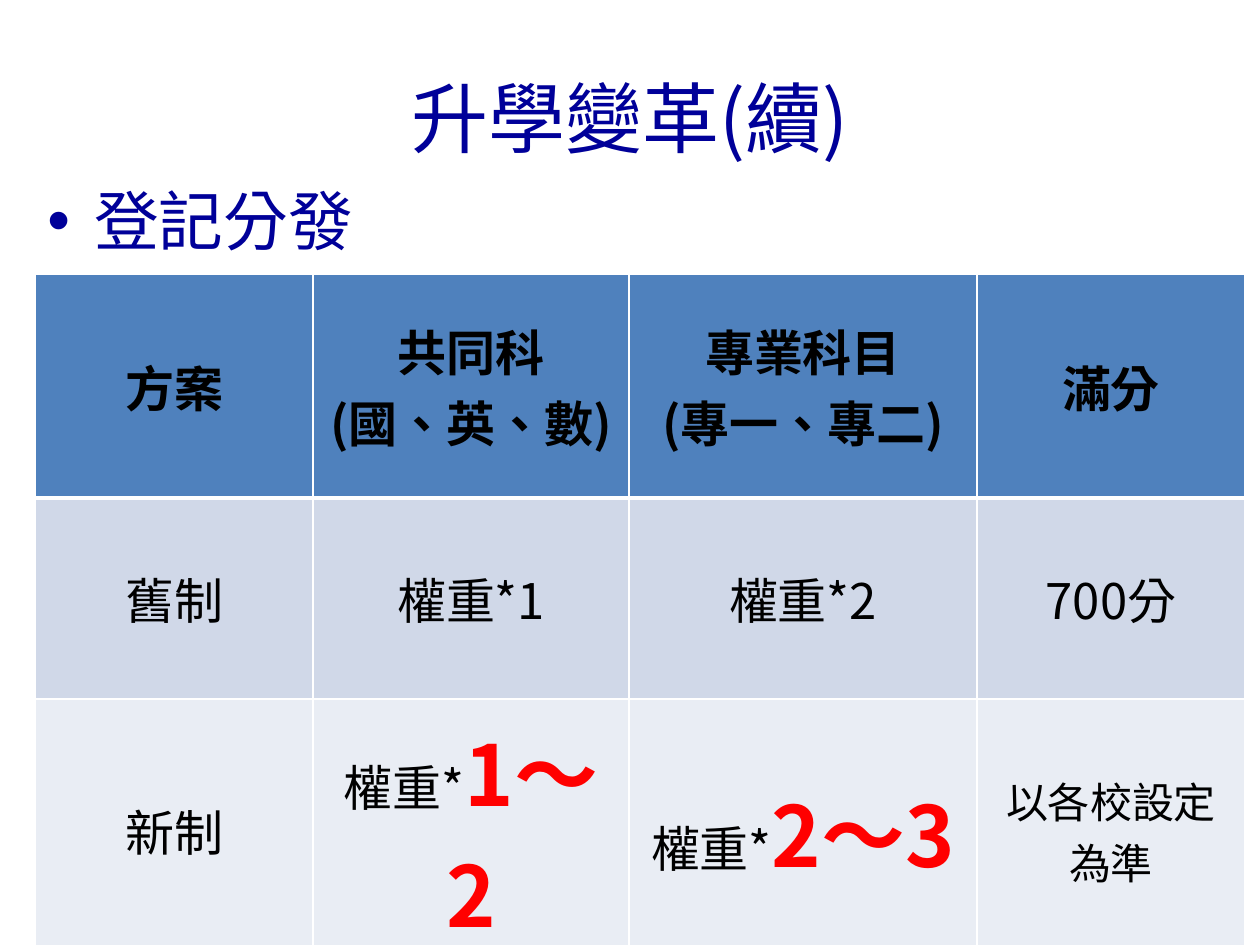
import dataclasses

import pptx
import pptx.dml.color
import pptx.enum.lang
import pptx.enum.text
import pptx.oxml
import pptx.oxml.ns
import pptx.util

PX = 914400 / 126
NS = pptx.oxml.ns.nsdecls("a")
SANS = "Noto Sans CJK SC"
TITLE = "Noto Sans CJK JP"
NAVY, BLACK, RED, WHITE = "000099", "000000", "FF0000", "FFFFFF"
CENTER = pptx.enum.text.PP_ALIGN.CENTER
MIDDLE = pptx.enum.text.MSO_ANCHOR.MIDDLE
TAIWAN = pptx.enum.lang.MSO_LANGUAGE_ID.TAIWAN \
    if hasattr(pptx.enum.lang.MSO_LANGUAGE_ID, "TAIWAN") else None


@dataclasses.dataclass
class Run:
    text: str
    size: int = 28
    color: str = BLACK
    bold: bool = False
    face: str = SANS


@dataclasses.dataclass
class Row:
    high: int
    fill: str
    edge: int  # width of the bottom border in points
    cells: list[list[list[Run]]]  # cells, paragraphs, runs


def emu(px: int) -> int:
    return round(px * PX)


def rgb(code: str) -> pptx.dml.color.RGBColor:
    return pptx.dml.color.RGBColor.from_string(code)


def write(para, runs: list[Run]) -> None:
    for item in runs:
        run = para.add_run()
        run.text = item.text
        style = {"size": pptx.util.Pt(item.size), "bold": item.bold, "name": item.face}
        for key, value in style.items():
            setattr(run.font, key, value)
        run.font.color.rgb = rgb(item.color)
        props = run.font._element
        props.set("lang", "zh-TW")
        east = SANS if item.face == "Calibri" else item.face
        props.find(pptx.oxml.ns.qn("a:latin")).addnext(
            pptx.oxml.parse_xml(f'<a:ea {NS} typeface="{east}"/>'))


def add_text(slide, box: tuple[int, int, int, int], run: Run):
    """Add a one-line text box and return its frame."""
    frame = slide.shapes.add_textbox(*map(emu, box)).text_frame
    frame.word_wrap = True
    write(frame.paragraphs[0], [run])
    return frame


def add_bullet(para, indent: int) -> None:
    props = para._p.get_or_add_pPr()
    props.set("marL", str(emu(indent)))
    props.set("indent", str(-emu(indent)))
    for tag in ('buFont {} typeface="Arial"', 'buChar {} char="•"'):
        props.append(pptx.oxml.parse_xml(f"<a:{tag.format(NS)}/>"))


def set_edges(cell, top: int, bottom: int) -> None:
    props = cell._tc.get_or_add_tcPr()
    for side, width in {"L": 1, "R": 1, "T": top, "B": bottom}.items():
        props.append(pptx.oxml.parse_xml(
            f'<a:ln{side} {NS} w="{pptx.util.Pt(width)}"><a:solidFill>'
            f'<a:srgbClr val="{WHITE}"/></a:solidFill></a:ln{side}>'))


def fill_cell(cell, paras: list[list[Run]], fill: str, top: int, bottom: int) -> None:
    set_edges(cell, top, bottom)
    cell.fill.solid()
    cell.fill.fore_color.rgb = rgb(fill)
    cell.vertical_anchor = MIDDLE
    frame = cell.text_frame
    for num, runs in enumerate(paras):
        para = frame.add_paragraph() if num else frame.paragraphs[0]
        para.alignment = CENTER
        write(para, runs)


def add_grid(slide, left: int, top: int, widths: list[int], rows: list[Row]) -> None:
    table = slide.shapes.add_table(
        len(rows), len(widths), emu(left), emu(top),
        emu(sum(widths)), emu(sum(row.high for row in rows))).table
    for col, width in zip(table.columns, widths):
        col.width = emu(width)
    above = 1
    for num, row in enumerate(rows):
        table.rows[num].height = emu(row.high)
        for col, paras in enumerate(row.cells):
            fill_cell(table.cell(num, col), paras, row.fill, above, row.edge)
        above = row.edge


def head(*lines: str) -> list[list[Run]]:
    return [[Run(line, bold=True)] for line in lines]


def plain(text: str) -> list[list[Run]]:
    return [[Run(text)]]


def weight(span: str) -> list[list[Run]]:
    return [[Run("權重*"), Run(span, 48, RED, True)]]


ROWS = [
    Row(224, "4F81BD", 3, [head("方案"), head("共同科", "(國、英、數)"),
                           head("專業科目", "(專一、專二)"), head("滿分")]),
    Row(201, "D0D8E8", 1, [plain(text) for text in ("舊制", "權重*1", "權重*2", "700分")]),
    Row(263, "E9EDF4", 1, [plain("新制"), weight("1～2"), weight("2～3"),
                           [[Run("以各校設定為準", 24, face="Calibri")]]]),
]


def main() -> None:
    deck = pptx.Presentation()
    deck.slide_width, deck.slide_height = emu(1260), emu(945)
    slide = deck.slides.add_slide(deck.slide_layouts[6])

    title = add_text(slide, (63, 38, 1134, 158), Run("升學變革(續)", 44, NAVY, face=TITLE))
    title.vertical_anchor = MIDDLE
    title.paragraphs[0].alignment = CENTER

    body = add_text(slide, (35, 175, 1160, 688), Run("登記分發", 37, NAVY))
    add_bullet(body.paragraphs[0], 47)

    add_grid(slide, 35, 274, [278, 316, 348, 268], ROWS)
    deck.save("out.pptx")


if __name__ == "__main__":
    main()
